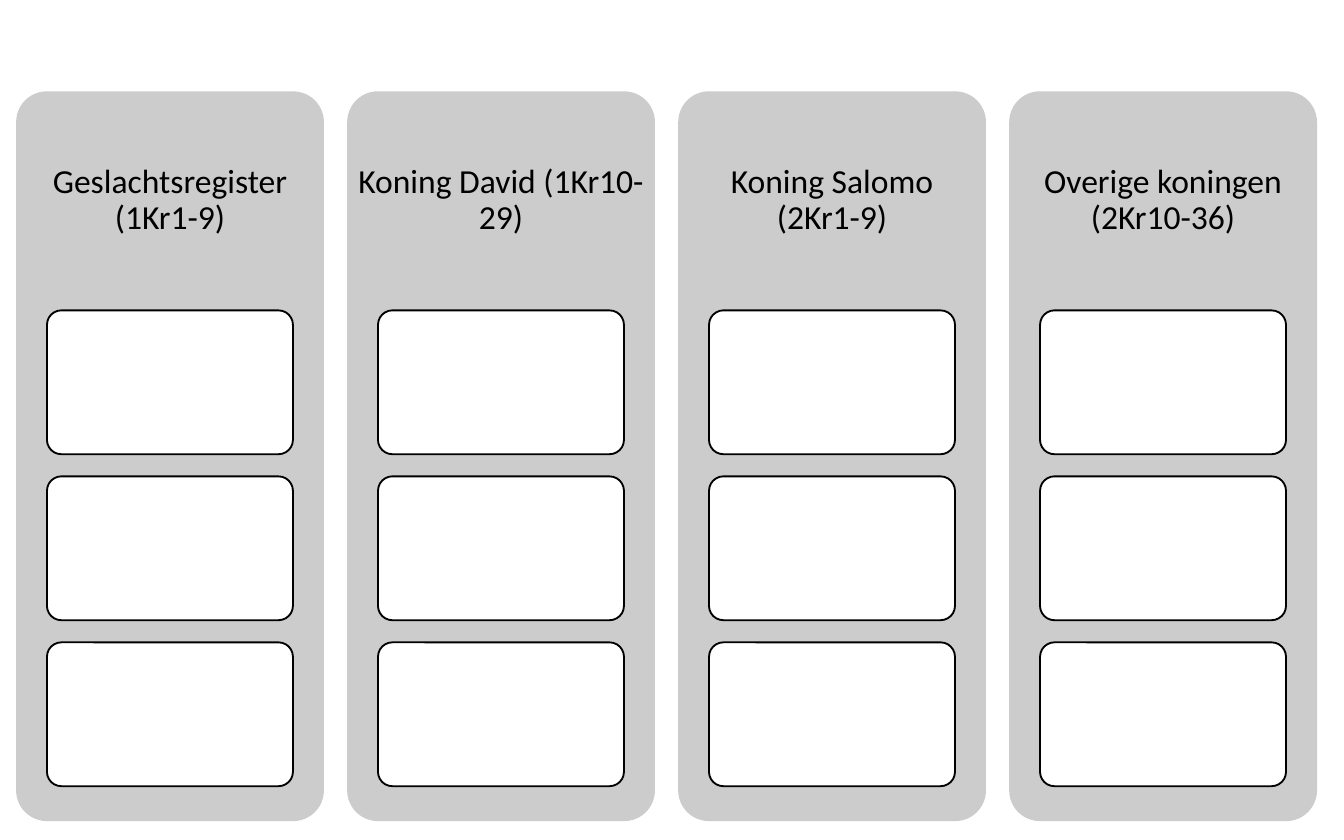
from pptx import Presentation, util as u
from pptx.dml.color import RGBColor
from pptx.enum import shapes, text

COLORS = {"column": "CCCCCC", "card": "FFFFFF", "ink": "000000"}
HEADINGS = [
    "Geslachtsregister (1Kr1-9)",
    "Koning David (1Kr10-29)",
    "Koning Salomo (2Kr1-9)",
    "Overige koningen (2Kr10-36)",
]

# Column and card grid, in inches
LEFT, TOP, COLUMN_STEP = 0.12, 0.68, 2.463
COLUMN_W, COLUMN_H, HEADING_H = 2.29, 5.43, 1.63
CARD_W, CARD_H, CARD_STEP, CARDS = 1.83, 1.07, 1.235, 3


def color(name):
    return RGBColor.from_string(COLORS[name])


def write(frame, words, *, size=18, font="Calibri", ink="ink", inset=0.07):
    """Set centred text in a frame."""
    frame.word_wrap = True
    frame.vertical_anchor = text.MSO_ANCHOR.MIDDLE
    frame.margin_left = frame.margin_right = u.Inches(inset)
    frame.margin_top = frame.margin_bottom = u.Inches(inset)
    paragraph = frame.paragraphs[0]
    paragraph.alignment = text.PP_ALIGN.CENTER
    paragraph.line_spacing = 0.9
    paragraph.space_after = u.Pt(size * 0.35)
    run = paragraph.add_run()
    run.text = words
    run.font.size = u.Pt(size)
    run.font.name = font
    run.font.color.rgb = color(ink)


class Diagram:
    """Holds the style and the group on the current slide."""

    corner = 0.1
    line_width = u.Pt(1)

    def __init__(self, slide):
        self.group = slide.shapes.add_group_shape()

    def panel(self, x, y, w, h, fill, line=None):
        panel = self.group.shapes.add_shape(
            shapes.MSO_SHAPE.ROUNDED_RECTANGLE, *map(u.Inches, (x, y, w, h)))
        panel.adjustments[0] = self.corner
        panel.shadow.inherit = False
        panel.fill.solid()
        panel.fill.fore_color.rgb = color(fill)
        if line:
            panel.line.color.rgb = color(line)
            panel.line.width = self.line_width
        else:
            panel.line.fill.background()

    def heading(self, x, y, w, h, words):
        heading = self.group.shapes.add_textbox(*map(u.Inches, (x, y, w, h)))
        write(heading.text_frame, words)


def main():
    deck = Presentation()
    deck.slide_width, deck.slide_height = u.Inches(10), u.Inches(6.25)
    diagram = Diagram(deck.slides.add_slide(deck.slide_layouts[6]))

    for column, words in enumerate(HEADINGS):
        # Grey column with its heading
        x = LEFT + column * COLUMN_STEP
        diagram.panel(x, TOP, COLUMN_W, COLUMN_H, "column")
        diagram.heading(x, TOP, COLUMN_W, HEADING_H, words)

        # Empty cards below the heading
        card_x = x + (COLUMN_W - CARD_W) / 2
        for row in range(CARDS):
            card_y = TOP + HEADING_H + row * CARD_STEP
            diagram.panel(card_x, card_y, CARD_W, CARD_H, "card", line="ink")

    deck.save("out.pptx")


if __name__ == "__main__":
    main()
